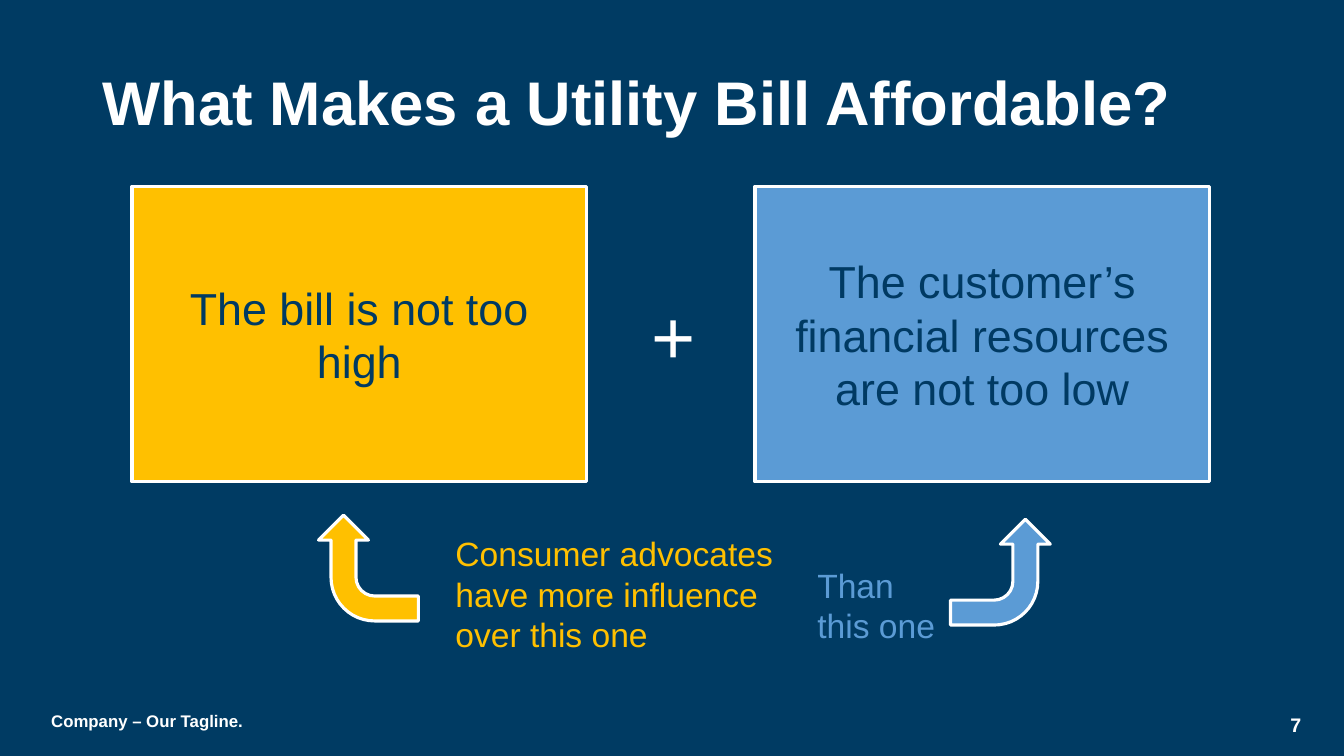
from dataclasses import dataclass

from pptx import Presentation
from pptx.dml.color import RGBColor
from pptx.enum.shapes import MSO_SHAPE
from pptx.enum.text import MSO_ANCHOR, PP_ALIGN
from pptx.oxml.ns import qn
from pptx.shapes.autoshape import Shape
from pptx.slide import Slide
from pptx.util import Pt

NAVY = RGBColor(0x00, 0x3B, 0x63)
INK = RGBColor(0x00, 0x3A, 0x63)
GOLD = RGBColor(0xFF, 0xC0, 0x00)
BLUE = RGBColor(0x5B, 0x9B, 0xD5)
WHITE = RGBColor(0xFF, 0xFF, 0xFF)


@dataclass(frozen=True)
class Area:
    left: float
    top: float
    width: float
    height: float

    def lengths(self) -> tuple[Pt, Pt, Pt, Pt]:
        return Pt(self.left), Pt(self.top), Pt(self.width), Pt(self.height)


@dataclass(frozen=True)
class Label:
    text: str
    area: Area
    size: float
    color: RGBColor
    bold: bool = False
    align: PP_ALIGN = PP_ALIGN.LEFT
    anchor: MSO_ANCHOR = MSO_ANCHOR.MIDDLE


@dataclass(frozen=True)
class Condition:
    text: str
    area: Area
    fill: RGBColor


@dataclass(frozen=True)
class Pointer:
    area: Area
    fill: RGBColor
    rotation: float
    mirrored: bool


CONDITIONS = [
    Condition("The bill is not too high", Area(94.3, 133.2, 324.7, 211), GOLD),
    Condition("The customer’s financial resources are not too low",
              Area(539.3, 133.2, 324.7, 211), BLUE),
]
POINTERS = [
    Pointer(Area(225.4, 370.1, 75.6, 71.3), GOLD, 270, False),
    Pointer(Area(676.8, 373, 75.6, 71.3), BLUE, 90, True),
]
TITLE = Label("What Makes a Utility Bill Affordable?",
              Area(66, 36.7, 828, 77.8), 44, WHITE, bold=True)
LABELS = [
    Label("Company – Our Tagline.", Area(29.5, 500.4, 216, 28.8), 12, WHITE, bold=True),
    Label("7", Area(898.6, 500.4, 54, 33.8), 14, WHITE, bold=True, align=PP_ALIGN.CENTER),
    Label("+", Area(445.7, 202.3, 71.3, 72.7), 54, WHITE, align=PP_ALIGN.CENTER),
    Label("Consumer advocates have more influence over this one",
          Area(318.2, 377.3, 258.5, 94.3), 24, GOLD, anchor=MSO_ANCHOR.TOP),
    Label("Than this one", Area(576.7, 399.6, 102.2, 65.5), 24, BLUE, anchor=MSO_ANCHOR.TOP),
]


def write(holder: Shape, label: Label) -> None:
    frame = holder.text_frame
    frame.text = label.text
    frame.word_wrap = True
    frame.vertical_anchor = label.anchor
    paragraph = frame.paragraphs[0]
    paragraph.alignment = label.align
    font_format = {"name": "Arial", "size": Pt(label.size), "bold": label.bold}
    for attribute, value in font_format.items():
        setattr(paragraph.runs[0].font, attribute, value)
    paragraph.runs[0].font.color.rgb = label.color


def add_title(slide: Slide, label: Label) -> None:
    heading = slide.shapes.title
    for attribute, value in zip(("left", "top", "width", "height"), label.area.lengths()):
        setattr(heading, attribute, value)
    write(heading, label)
    heading.text_frame.paragraphs[0].line_spacing = 0.9


def add_outlined(slide: Slide, kind: MSO_SHAPE, area: Area, fill: RGBColor) -> Shape:
    outlined = slide.shapes.add_shape(kind, *area.lengths())
    outlined.shadow.inherit = False
    outlined.fill.solid()
    outlined.fill.fore_color.rgb = fill
    outlined.line.color.rgb = WHITE
    outlined.line.width = Pt(2.25)
    return outlined


def add_condition(slide: Slide, condition: Condition) -> None:
    card = add_outlined(slide, MSO_SHAPE.ROUNDED_RECTANGLE, condition.area, condition.fill)
    card.adjustments[0] = 0
    write(card, Label(condition.text, condition.area, 32, INK, align=PP_ALIGN.CENTER))


def add_pointer(slide: Slide, pointer: Pointer) -> None:
    arrow = add_outlined(slide, MSO_SHAPE.BENT_ARROW, pointer.area, pointer.fill)
    arrow.rotation = pointer.rotation
    if pointer.mirrored:
        arrow.element.spPr.find(qn("a:xfrm")).set("flipH", "1")


def main() -> None:
    deck = Presentation()
    deck.slide_width, deck.slide_height = Pt(960), Pt(540)
    slide = deck.slides.add_slide(deck.slide_layouts[5])
    slide.background.fill.solid()
    slide.background.fill.fore_color.rgb = NAVY
    add_title(slide, TITLE)
    for condition in CONDITIONS:
        add_condition(slide, condition)
    for label in LABELS:
        write(slide.shapes.add_textbox(*label.area.lengths()), label)
    for pointer in POINTERS:
        add_pointer(slide, pointer)
    deck.save("out.pptx")


if __name__ == "__main__":
    main()
